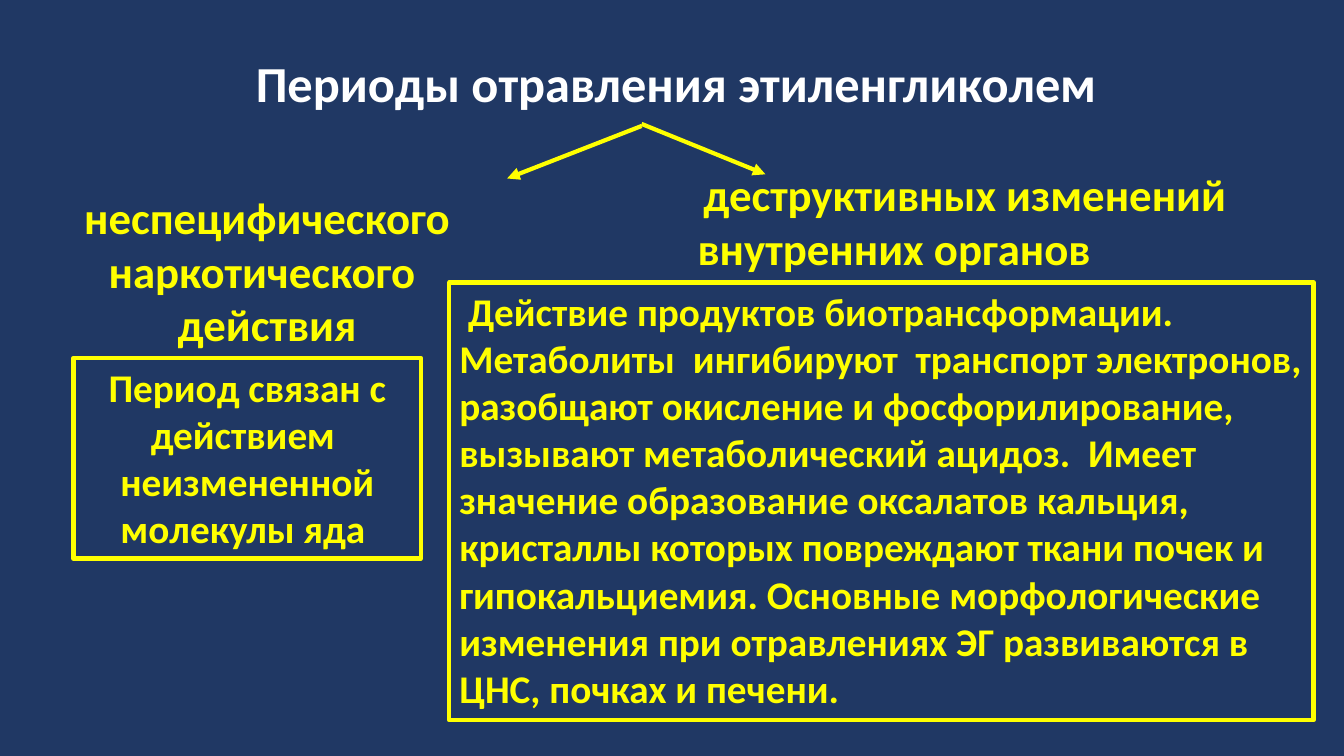
from pptx import Presentation
from pptx.dml.color import RGBColor
from pptx.enum.shapes import MSO_CONNECTOR, MSO_SHAPE
from pptx.enum.text import MSO_ANCHOR, MSO_AUTO_SIZE, PP_ALIGN
from pptx.oxml.ns import qn
from pptx.util import Pt
from lxml.etree import SubElement

PX = 9525
NAVY = RGBColor(0x20, 0x38, 0x64)
WHITE = RGBColor(0xFF, 0xFF, 0xFF)
YELLOW = RGBColor(0xFF, 0xFF, 0x00)


def px(*lengths):
    return [length * PX for length in lengths]


def write(box, paragraphs, size, color, align, anchor=MSO_ANCHOR.TOP):
    frame = box.text_frame
    frame.word_wrap = True
    frame.auto_size = MSO_AUTO_SIZE.NONE
    frame.vertical_anchor = anchor
    frame.text = "\n".join(paragraphs)
    for para in frame.paragraphs:
        para.alignment = align
        para.line_spacing = 1.0
        para.space_before = Pt(0)
        for span in para.runs:
            span.font.name = "Calibri"
            span.font.size = Pt(size)
            span.font.bold = True
            span.font.color.rgb = color


deck = Presentation()
deck.slide_width, deck.slide_height = px(1280, 720)
page = deck.slides.add_slide(deck.slide_layouts[5])
page.background.fill.solid()
page.background.fill.fore_color.rgb = NAVY

title = page.shapes.title
title.left, title.top, title.width, title.height = px(234, 45, 835, 68)
write(title, ["Периоды отравления этиленгликолем"], 36, WHITE, PP_ALIGN.LEFT)

headings = [
    ((70, 147, 369, 194), PP_ALIGN.CENTER,
     ["неспецифического наркотического ", "действия"]),
    ((655, 154, 555, 113), PP_ALIGN.LEFT,
     ["деструктивных изменений внутренних органов"]),
]
for bounds, align, paragraphs in headings:
    heading = page.shapes.add_textbox(*px(*bounds))
    write(heading, paragraphs, 32, YELLOW, align)
    first = heading.text_frame.paragraphs[0]
    wording = first.runs[0].text
    first.runs[0].text = " "
    first.runs[0].font.size = Pt(18)
    span = first.add_run()
    span.text = wording
    span.font.name = "Calibri"
    span.font.size = Pt(32)
    span.font.bold = True
    span.font.color.rgb = YELLOW

for ends in [(611, 120, 483, 170), (611, 118, 729, 166)]:
    arrow = page.shapes.add_connector(MSO_CONNECTOR.STRAIGHT, *px(*ends))
    arrow.line.color.rgb = YELLOW
    arrow.line.width = Pt(3)
    SubElement(arrow.line._get_or_add_ln(), qn("a:tailEnd"), type="triangle")
    SubElement(arrow._element.spPr, qn("a:effectLst"))

descriptions = [
    ((70, 341, 331, 191), PP_ALIGN.CENTER,
     ["Период связан с действием ", "неизмененной молекулы яда "]),
    ((428, 269, 823, 417), PP_ALIGN.LEFT,
     [" Действие продуктов биотрансформации. "
      "Метаболиты  ингибируют  транспорт электронов, "
      "разобщают окисление и фосфорилирование, "
      "вызывают метаболический ацидоз.  Имеет "
      "значение образование оксалатов кальция, "
      "кристаллы которых повреждают ткани почек и "
      "гипокальциемия. Основные морфологические "
      "изменения при отравлениях ЭГ развиваются в "
      "ЦНС, почках и печени."]),
]
for bounds, align, paragraphs in descriptions:
    box = page.shapes.add_shape(MSO_SHAPE.RECTANGLE, *px(*bounds))
    box.shadow.inherit = False
    box.fill.background()
    box.line.color.rgb = YELLOW
    box.line.width = Pt(3)
    write(box, paragraphs, 28, YELLOW, align)

deck.save("out.pptx")
